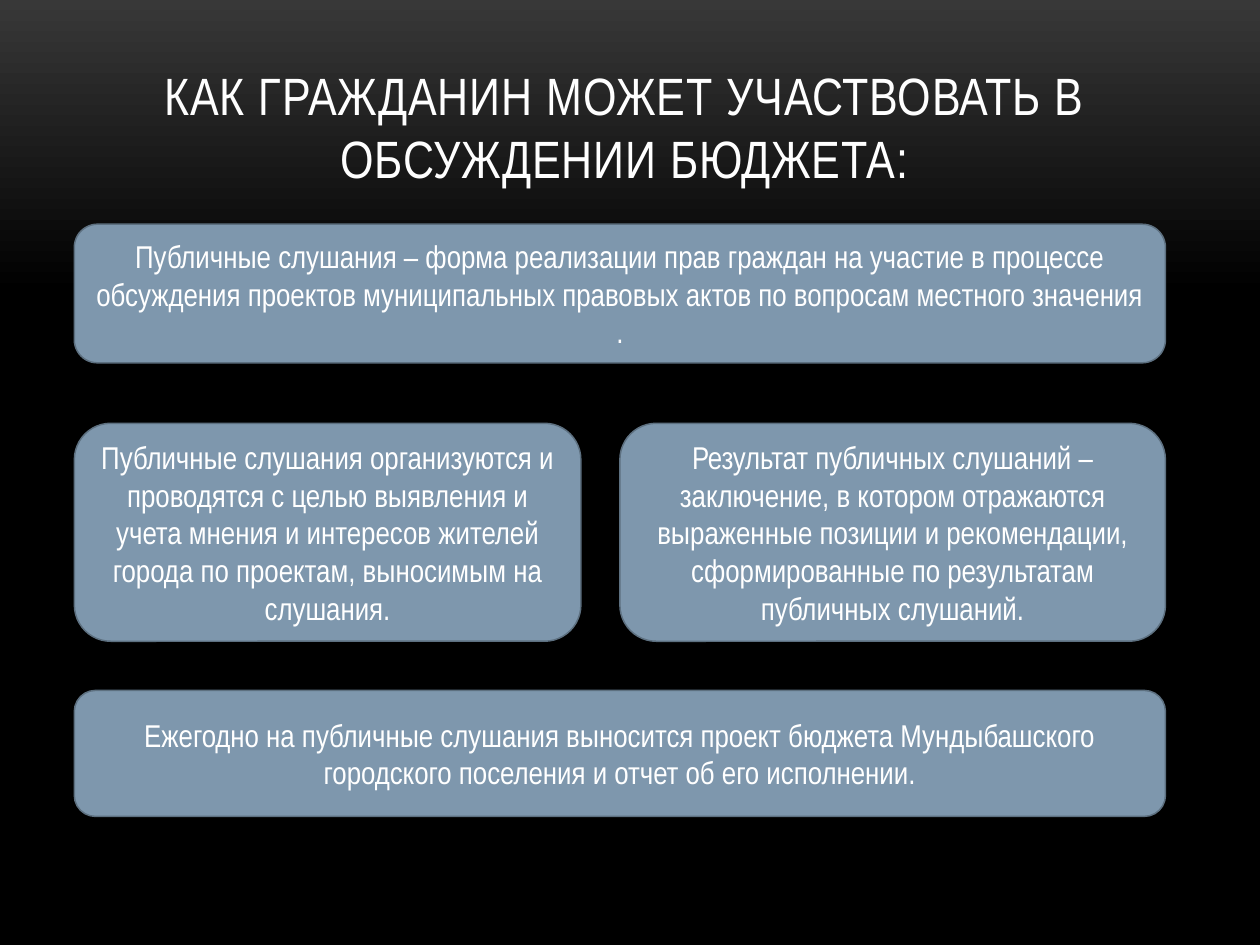
from pptx import Presentation
from pptx import util as u
from pptx.dml.color import RGBColor
from pptx.enum import shapes, text

INK = {"top": "383838", "base": "000000", "card": "7E97AD",
       "edge": "5D7080", "title": "FEFEFE", "body": "FFFFFF"}
FONT = "Arial Narrow"
LEFT, RIGHT = 0.59, 9.25
WIDE = RIGHT - LEFT
MID = 4.92

CARDS = [
    (LEFT, 1.78, WIDE, 1.1,
     "Публичные слушания – форма реализации прав граждан на участие в процессе "
     "обсуждения проектов муниципальных правовых актов по вопросам местного значения ."),
    (LEFT, 3.36, 4.02, 1.73,
     "Публичные слушания организуются и проводятся с целью выявления и учета мнения "
     "и интересов жителей города по проектам, выносимым на слушания."),
    (MID, 3.36, RIGHT - MID, 1.73,
     "Результат публичных слушаний – заключение, в котором отражаются выраженные "
     "позиции и рекомендации, сформированные по результатам публичных слушаний."),
    (LEFT, 5.48, WIDE, 1,
     "Ежегодно на публичные слушания выносится проект бюджета Мундыбашского "
     "городского поселения и отчет об его исполнении."),
]


def color(name):
    return RGBColor.from_string(INK[name])


def paint(slide):
    fill = slide.background.fill
    fill.gradient()
    fill.gradient_angle = 270
    for stop, name, place in zip(fill.gradient_stops, ("top", "base"), (0, 0.31)):
        stop.color.rgb = color(name)
        stop.position = place


def write(shape, words, size, name, anchor):
    frame = shape.text_frame
    frame.word_wrap = True
    frame.vertical_anchor = anchor
    para = frame.paragraphs[0]
    para.alignment = text.PP_ALIGN.CENTER
    run = para.add_run()
    run.text = words
    run.font.name = FONT
    run.font.size = u.Pt(size)
    run.font.color.rgb = color(name)
    return run


def head(slide, words):
    box = slide.shapes.add_textbox(*map(u.Inches, (0.43, 0.3, 9.06, 1.25)))
    run = write(box, words, 30, "title", text.MSO_ANCHOR.BOTTOM)
    run.font._element.set("spc", "50")


def card(slide, left, top, width, height, words):
    box = slide.shapes.add_shape(shapes.MSO_SHAPE.ROUNDED_RECTANGLE,
                                 *map(u.Inches, (left, top, width, height)))
    box.shadow.inherit = False
    box.fill.solid()
    box.fill.fore_color.rgb = color("card")
    box.line.color.rgb = color("edge")
    box.line.width = u.Pt(0.85)
    write(box, words, 18, "body", text.MSO_ANCHOR.MIDDLE)


def main():
    deck = Presentation()
    deck.slide_width, deck.slide_height = u.Inches(10), u.Inches(7.5)
    slide = deck.slides.add_slide(deck.slide_layouts[6])
    paint(slide)
    head(slide, "КАК ГРАЖДАНИН МОЖЕТ УЧАСТВОВАТЬ В ОБСУЖДЕНИИ БЮДЖЕТА:")
    for item in CARDS:
        card(slide, *item)
    deck.save("out.pptx")


if __name__ == "__main__":
    main()
